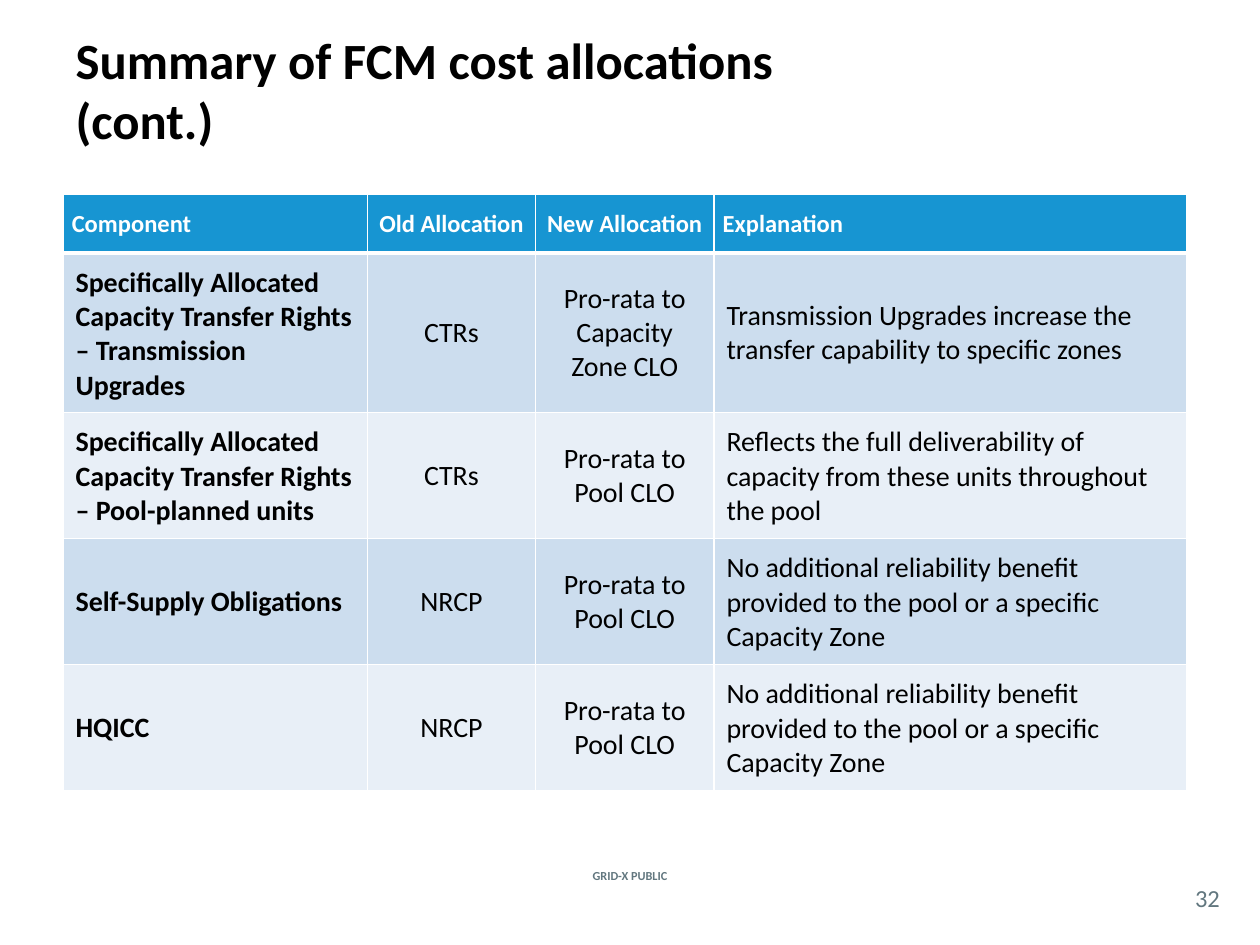
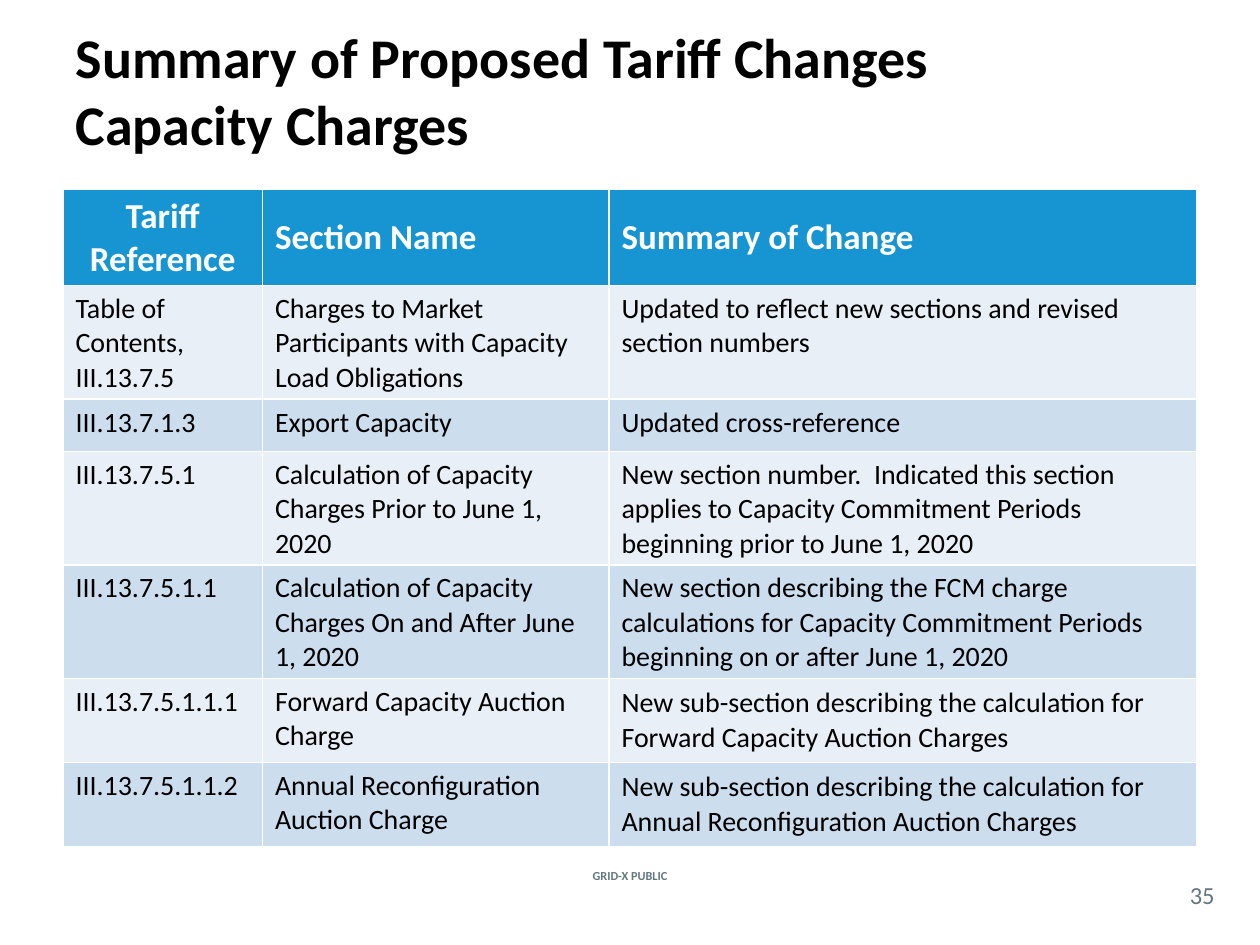
"""Two table slides on capacity cost allocations and tariff changes."""
from dataclasses import dataclass

from lxml import etree
from pptx import Presentation
from pptx import util as u
from pptx.dml.color import RGBColor
from pptx.enum import text
from pptx.oxml.ns import qn

LEFT, CENTER = text.PP_ALIGN.LEFT, text.PP_ALIGN.CENTER
TOP, MIDDLE = text.MSO_ANCHOR.TOP, text.MSO_ANCHOR.MIDDLE
GRID_COLS, GRID_ROWS = 120, 90


@dataclass(frozen=True)
class Theme:
    """Colours, font and type sizes shared by the slides."""
    font: str = "Calibri"
    ink: str = "000000"
    paper: str = "FFFFFF"
    muted: str = "62777F"
    header: str = "1795D2"
    dark_band: str = "CCDDEE"
    light_band: str = "E8EFF7"
    body_size: int = 16
    page_size: int = 14
    footer_size: int = 7


@dataclass(frozen=True)
class TableStyle:
    """Layout choices of one table, in grid units and points."""
    cols: tuple
    rows: tuple
    bands: tuple
    header_size: int
    header_aligns: tuple
    body_aligns: tuple
    header_margins: tuple
    body_margins: tuple
    header_rule: float = 1
    bold_first: bool = False


THEME = Theme()
TITLE_BOX = (6, 1, 108, 15)
FOOTER_BOX = (51.2, 82.7, 17.6, 2)

ALLOCATION_STYLE = TableStyle(
    cols=(29, 16, 17, 45), rows=(5.6, 7, 9, 9, 10),
    bands=(THEME.dark_band, THEME.light_band), header_size=14,
    header_aligns=(LEFT, CENTER, CENTER, LEFT),
    body_aligns=(LEFT, CENTER, CENTER, LEFT),
    header_margins=(0.07, 0), body_margins=(0.1, 0.1),
    header_rule=3, bold_first=True)

TARIFF_STYLE = TableStyle(
    cols=(19, 33, 56), rows=(8, 8, 5, 8, 8, 8, 8),
    bands=(THEME.light_band, THEME.dark_band), header_size=20,
    header_aligns=(CENTER, LEFT, LEFT), body_aligns=(LEFT, LEFT, LEFT),
    header_margins=(0.1, 0.05), body_margins=(0.1, 0.05))

NO_BENEFIT = ("No additional reliability benefit provided to the pool "
              "or a specific Capacity Zone")
RIGHTS = "Specifically Allocated Capacity Transfer Rights – "
POOL = "Pro-rata to Pool CLO"
ALLOCATIONS = (
    ("Component", "Old Allocation", "New Allocation", "Explanation"),
    (RIGHTS + "Transmission Upgrades", "CTRs", "Pro-rata to Capacity Zone CLO",
     "Transmission Upgrades increase the transfer capability to specific zones"),
    (RIGHTS + "Pool-planned units", "CTRs", POOL,
     "Reflects the full deliverability of capacity from these units throughout the pool"),
    ("Self-Supply Obligations", "NRCP", POOL, NO_BENEFIT),
    ("HQICC", "NRCP", POOL, NO_BENEFIT),
)
TARIFF_CHANGES = (
    ("Tariff Reference", "Section Name", "Summary of Change"),
    ("Table of Contents, III.13.7.5",
     "Charges to Market Participants with Capacity Load Obligations",
     "Updated to reflect new sections and revised section numbers"),
    ("III.13.7.1.3", "Export Capacity", "Updated cross-reference"),
    ("III.13.7.5.1", "Calculation of Capacity Charges Prior to June 1, 2020",
     "New section number.  Indicated this section applies to Capacity "
     "Commitment Periods beginning prior to June 1, 2020"),
    ("III.13.7.5.1.1", "Calculation of Capacity Charges On and After June 1, 2020",
     "New section describing the FCM charge calculations for Capacity "
     "Commitment Periods beginning on or after June 1, 2020"),
    ("III.13.7.5.1.1.1", "Forward Capacity Auction Charge",
     "New sub-section describing the calculation for Forward Capacity Auction Charges"),
    ("III.13.7.5.1.1.2", "Annual Reconfiguration Auction Charge",
     "New sub-section describing the calculation for Annual Reconfiguration Auction Charges"),
)


def across(cols):
    """Turn grid columns into a length."""
    return u.Inches(10 * cols / GRID_COLS)


def down(rows):
    """Turn grid rows into a length."""
    return u.Inches(7.5 * rows / GRID_ROWS)


def place(box):
    """Turn a grid box into left, top, width and height."""
    x, y, w, h = box
    return across(x), down(y), across(w), down(h)


def format_text(tf, size, color, bold=False, align=LEFT):
    """Format every paragraph and run of a text frame."""
    for p in tf.paragraphs:
        p.alignment = align
        for r in p.runs:
            r.font.name = THEME.font
            r.font.size = u.Pt(size)
            r.font.bold = bold
            r.font.color.rgb = RGBColor.from_string(color)


def add_title(s, title, size):
    """Fill and place the title placeholder."""
    sp = s.shapes.title
    sp.left, sp.top, sp.width, sp.height = place(TITLE_BOX)
    tf = sp.text_frame
    tf.text = title
    tf.auto_size = text.MSO_AUTO_SIZE.NONE
    tf.vertical_anchor = MIDDLE
    format_text(tf, size, THEME.ink, bold=True)


def add_label(s, box, label, size, bold=False, anchor=MIDDLE):
    """Add a centred muted label without insets."""
    tf = s.shapes.add_textbox(*place(box)).text_frame
    tf.margin_left = tf.margin_right = tf.margin_top = tf.margin_bottom = 0
    tf.word_wrap = True
    tf.vertical_anchor = anchor
    tf.text = label
    format_text(tf, size, THEME.muted, bold, CENTER)


def set_borders(cell, top, bottom):
    """Draw the white rules around a cell."""
    tc_pr = cell._tc.get_or_add_tcPr()
    sides = (("a:lnL", 1), ("a:lnR", 1), ("a:lnT", top), ("a:lnB", bottom))
    for i, (tag, width) in enumerate(sides):
        ln = etree.Element(qn(tag), w=str(u.Pt(width)))
        fill = etree.SubElement(ln, qn("a:solidFill"))
        etree.SubElement(fill, qn("a:srgbClr"), val=THEME.paper)
        tc_pr.insert(i, ln)


def fill_cell(cell, label, fill, margins, anchor):
    """Set a cell's text, fill, margins and anchor."""
    cell.text = label
    cell.fill.solid()
    cell.fill.fore_color.rgb = RGBColor.from_string(fill)
    cell.margin_left = cell.margin_right = u.Inches(margins[0])
    cell.margin_top = cell.margin_bottom = u.Inches(margins[1])
    cell.vertical_anchor = anchor


def add_banded_table(s, box, data, style, anchor_of):
    """Add a table with a blue header and banded body rows."""
    frame = s.shapes.add_table(len(data), len(data[0]), *place(box))
    table = frame.table
    for column, width in zip(table.columns, style.cols):
        column.width = across(width)
    for row, height in zip(table.rows, style.rows):
        row.height = down(height)
    frame.height = down(box[3])
    for i, labels in enumerate(data):
        for j, label in enumerate(labels):
            cell = table.cell(i, j)
            if i == 0:
                fill_cell(cell, label, THEME.header, style.header_margins, MIDDLE)
                format_text(cell.text_frame, style.header_size, THEME.paper,
                            True, style.header_aligns[j])
            else:
                fill_cell(cell, label, style.bands[(i - 1) % 2],
                          style.body_margins, anchor_of(i, j))
                format_text(cell.text_frame, THEME.body_size, THEME.ink,
                            style.bold_first and j == 0, style.body_aligns[j])
            set_borders(cell, style.header_rule if i == 1 else 1,
                        style.header_rule if i == 0 else 1)


def add_slide(prs, title, size, page, page_box):
    """Add a slide with its title, footer and page number."""
    s = prs.slides.add_slide(prs.slide_layouts[5])
    add_label(s, FOOTER_BOX, "GRID-X PUBLIC", THEME.footer_size, True, TOP)
    add_label(s, page_box, page, THEME.page_size)
    add_title(s, title, size)
    return s


def allocation_slide(prs):
    """Build the cost allocation summary."""
    s = add_slide(prs, "Summary of FCM cost allocations\v(cont.)", 29,
                  "32", (112, 84, 6, 3))
    add_banded_table(s, (6, 18.5, 107, 56.8), ALLOCATIONS, ALLOCATION_STYLE,
                     lambda i, j: MIDDLE)


def tariff_slide(prs):
    """Build the tariff change summary."""
    s = add_slide(prs, "Summary of Proposed Tariff Changes\vCapacity Charges", 32,
                  "35", (112, 83.5, 5, 3.5))
    add_banded_table(s, (6, 18, 108, 62.6), TARIFF_CHANGES, TARIFF_STYLE,
                     lambda i, j: MIDDLE if j == 2 and i > 2 else TOP)


def main():
    """Build and save the presentation."""
    prs = Presentation()
    prs.slide_width, prs.slide_height = across(GRID_COLS), down(GRID_ROWS)
    allocation_slide(prs)
    tariff_slide(prs)
    prs.save("out.pptx")


if __name__ == "__main__":
    main()
